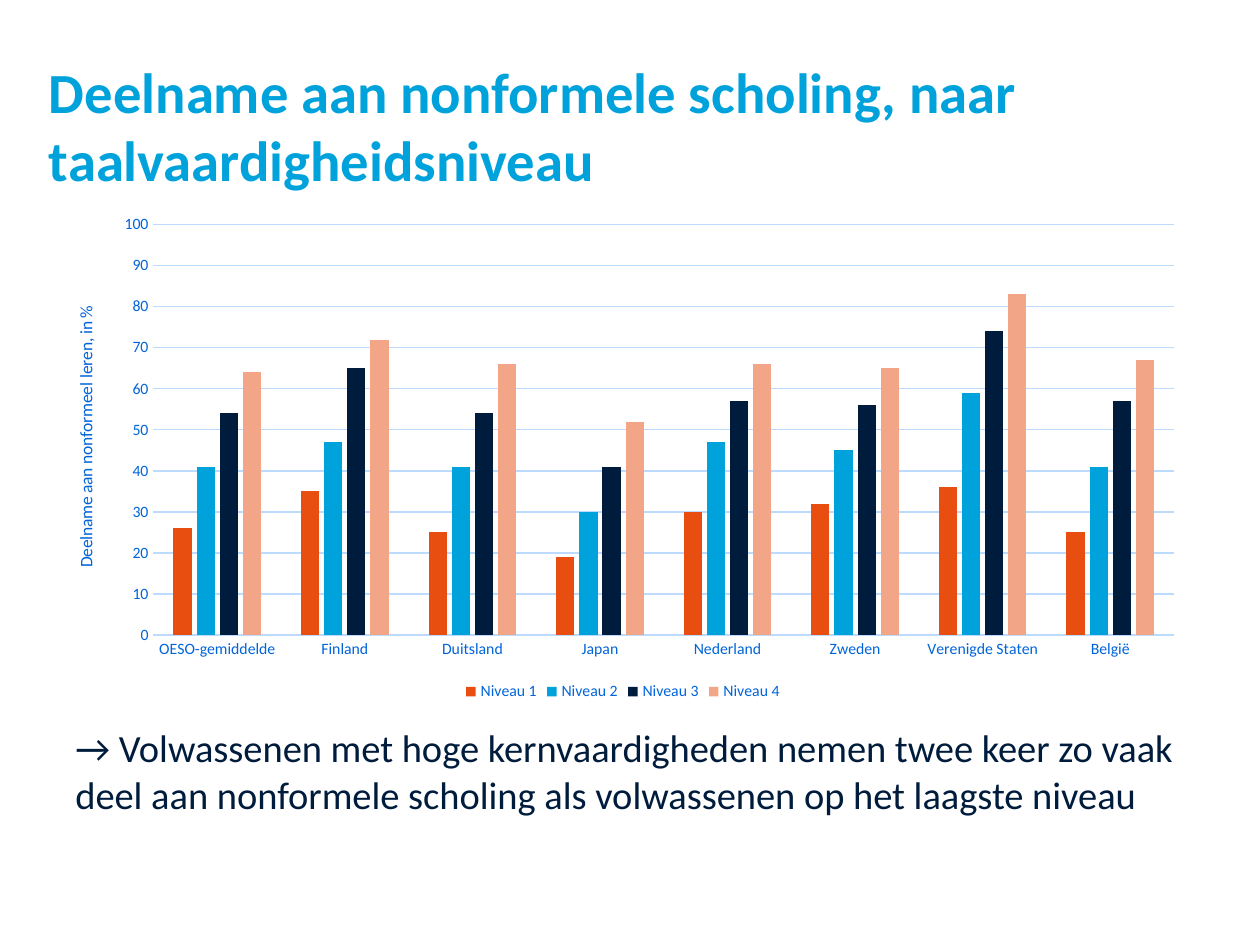
from dataclasses import dataclass

from pptx import Presentation
from pptx.chart.data import CategoryChartData
from pptx.dml.color import RGBColor
from pptx.enum.chart import XL_CHART_TYPE, XL_LEGEND_POSITION, XL_TICK_MARK
from pptx.enum.text import MSO_ANCHOR
from pptx.util import Pt

# Content
TITLE = "Deelname aan nonformele scholing, naar taalvaardigheidsniveau"
CONCLUSION = ("→ Volwassenen met hoge kernvaardigheden nemen twee keer zo vaak "
              "deel aan nonformele scholing als volwassenen op het laagste niveau")
AXIS_TITLE = "Deelname aan nonformeel leren, in %"
COUNTRIES = ["OESO-gemiddelde", "Finland", "Duitsland", "Japan",
             "Nederland", "Zweden", "Verenigde Staten", "België"]
LEVELS = [
    ("Niveau 1", [26, 35, 25, 19, 30, 32, 36, 25], "E84E10"),
    ("Niveau 2", [41, 47, 41, 30, 47, 45, 59, 41], "00A2DB"),
    ("Niveau 3", [54, 65, 54, 41, 57, 56, 74, 57], "001C3D"),
    ("Niveau 4", [64, 72, 66, 52, 66, 65, 83, 67], "F3A687"),
]


@dataclass(frozen=True)
class Theme:
    font: str = "Calibri"
    title: str = "00A2DB"
    body: str = "001C3D"
    label: str = "0064DA"
    grid: str = "BCDBFF"
    title_size: float = 32.4
    body_size: float = 22
    axis_title_size: float = 10
    label_size: float = 9


THEME = Theme()

# Left, top, width, height in points
TITLE_BOX = (28, 32.4, 656, 60)
CHART_BOX = (28, 117.4, 656, 286)
CONCLUSION_BOX = (36, 410.4, 662.4, 60.5)


def style_font(font, size, color, bold=False):
    font.name = THEME.font
    font.size = Pt(size)
    font.bold = bold
    font.color.rgb = RGBColor.from_string(color)


def style_line(line, color):
    line.color.rgb = RGBColor.from_string(color)
    line.width = Pt(0.75)


def add_text(slide, box, text, size, color, bold=False, inset=None):
    frame = slide.shapes.add_textbox(*map(Pt, box)).text_frame
    frame.word_wrap = True
    frame.vertical_anchor = MSO_ANCHOR.TOP
    if inset is not None:
        frame.margin_left = frame.margin_right = Pt(inset)
        frame.margin_top = frame.margin_bottom = Pt(inset)
    paragraph = frame.paragraphs[0]
    paragraph.text = text
    style_font(paragraph.font, size, color, bold)


def add_participation_chart(slide):
    data = CategoryChartData()
    data.categories = COUNTRIES
    for name, shares, _ in LEVELS:
        data.add_series(name, shares)
    chart = slide.shapes.add_chart(
        XL_CHART_TYPE.COLUMN_CLUSTERED, *map(Pt, CHART_BOX), data).chart
    chart.has_title = False
    style_font(chart.font, THEME.axis_title_size, THEME.body)

    # Columns
    plot = chart.plots[0]
    plot.vary_by_categories = False
    plot.gap_width, plot.overlap = 219, -27
    for series, (_, _, color) in zip(plot.series, LEVELS):
        series.format.fill.solid()
        series.format.fill.fore_color.rgb = RGBColor.from_string(color)

    # Axes
    countries, shares = chart.category_axis, chart.value_axis
    for axis in (countries, shares):
        axis.major_tick_mark = axis.minor_tick_mark = XL_TICK_MARK.NONE
        style_font(axis.tick_labels.font, THEME.label_size, THEME.label)
    style_line(countries.format.line, THEME.grid)
    shares.format.line.fill.background()
    shares.minimum_scale, shares.maximum_scale, shares.major_unit = 0, 100, 10
    style_line(shares.major_gridlines.format.line, THEME.grid)
    axis_caption = shares.axis_title.text_frame.paragraphs[0]
    axis_caption.text = AXIS_TITLE
    style_font(axis_caption.font, THEME.axis_title_size, THEME.label)

    # Legend
    chart.has_legend = True
    chart.legend.position = XL_LEGEND_POSITION.BOTTOM
    chart.legend.include_in_layout = False
    style_font(chart.legend.font, THEME.label_size, THEME.label)


def main():
    deck = Presentation()
    deck.slide_width, deck.slide_height = Pt(720), Pt(540)
    slide = deck.slides.add_slide(deck.slide_layouts[6])
    add_text(slide, TITLE_BOX, TITLE, THEME.title_size, THEME.title,
             bold=True, inset=0)
    add_participation_chart(slide)
    add_text(slide, CONCLUSION_BOX, CONCLUSION, THEME.body_size, THEME.body)
    deck.save("out.pptx")


if __name__ == "__main__":
    main()
